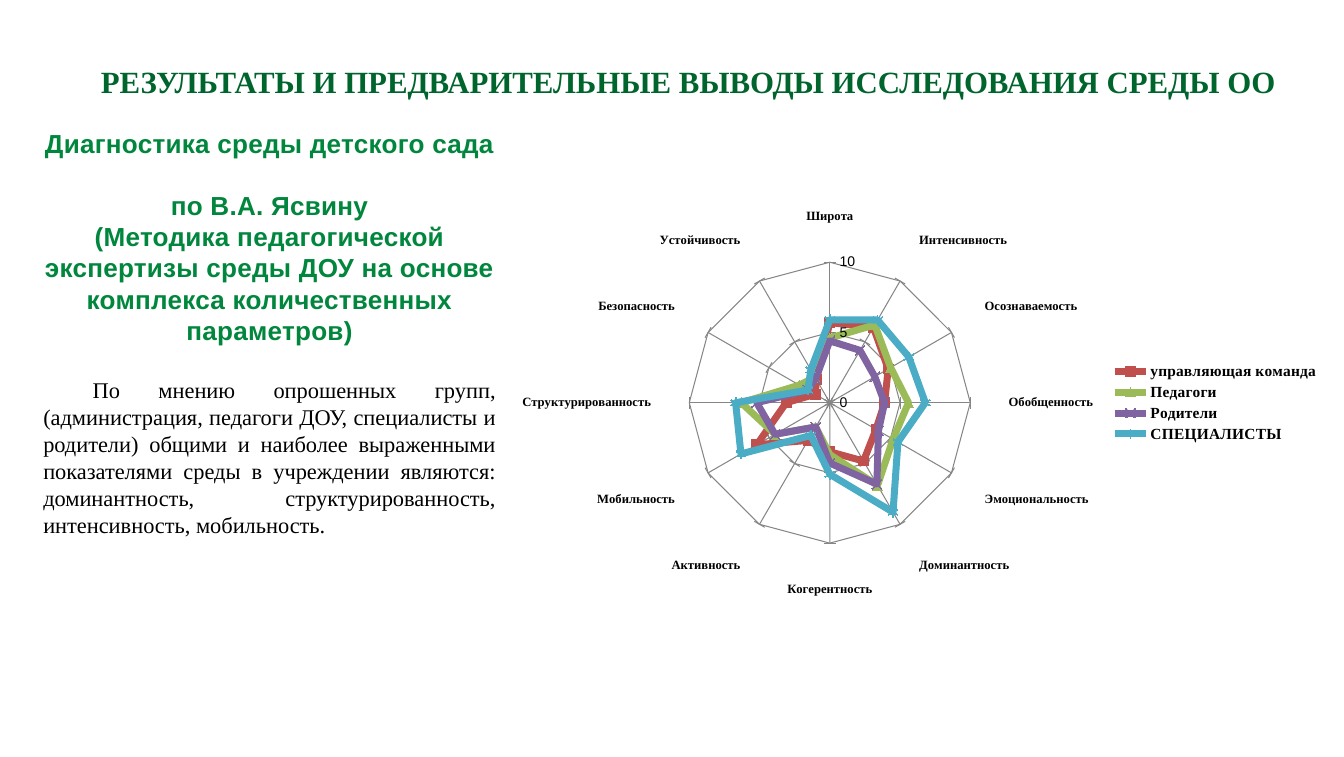
import pptx
import pptx.chart.data
import pptx.dml.color
import pptx.enum.chart
import pptx.enum.text
import pptx.util
from dataclasses import dataclass

Inches, Pt = pptx.util.Inches, pptx.util.Pt
ALIGN = pptx.enum.text.PP_ALIGN


@dataclass(frozen=True)
class Theme:
    sans: str = "Arial"
    serif: str = "Times New Roman"
    title: str = "00642D"
    heading: str = "00863D"
    text: str = "000000"
    grid: str = "868686"
    series: tuple = ("C0504D", "9BBB59", "8064A2", "4BACC6")
    title_size: float = 22
    heading_size: float = 18.6
    body_size: float = 16
    legend_size: float = 11
    scale_size: float = 10
    category_size: float = 9


THEME = Theme()

TITLE = "РЕЗУЛЬТАТЫ И ПРЕДВАРИТЕЛЬНЫЕ ВЫВОДЫ ИССЛЕДОВАНИЯ СРЕДЫ ОО"
HEADINGS = (
    "Диагностика среды детского сада",
    "по В.А. Ясвину",
    "(Методика педагогической экспертизы среды ДОУ на основе "
    "комплекса количественных параметров)",
)
FINDINGS = (
    "По мнению опрошенных групп, (администрация, педагоги ДОУ, специалисты "
    "и родители) общими и наиболее выраженными показателями среды в учреждении "
    "являются: доминантность, структурированность, интенсивность, мобильность."
)
CATEGORIES = (
    "Широта", "Интенсивность", "Осознаваемость", "Обобщенность",
    "Эмоциональность", "Доминантность", "Когерентность", "Активность",
    "Мобильность", "Структурированность", "Безопасность", "Устойчивость",
)
RATINGS = {
    "управляющая команда": (5.7, 6.2, 4.8, 3.9, 3.8, 4.8, 3.5, 3.1, 6, 3.1, 1.2, 1.9),
    "Педагоги": (4.6, 6.4, 5, 5.6, 5.2, 6.8, 3.7, 2, 4.5, 6.3, 2.5, 2.1),
    "Родители": (4.4, 4.3, 3.7, 3.9, 4, 6.7, 4.3, 2, 4.5, 5.2, 1.8, 2),
    "СПЕЦИАЛИСТЫ": (5.9, 6.8, 6.5, 6.8, 5.6, 9, 5.1, 2.7, 7.3, 6.7, 1.8, 2.7),
}


def rgb(value):
    return pptx.dml.color.RGBColor.from_string(value)


def set_font(font, name, size, color, bold=False):
    font.name, font.size, font.bold = name, Pt(size), bold
    font.color.rgb = rgb(color)


def add_text_frame(slide, box):
    tf = slide.shapes.add_textbox(*map(Inches, box)).text_frame
    tf.word_wrap = True
    return tf


def add_title(slide, box):
    tf = add_text_frame(slide, box)
    tf.margin_left = tf.margin_right = tf.margin_top = tf.margin_bottom = 0
    p = tf.paragraphs[0]
    p.text, p.alignment, p.line_spacing = TITLE, ALIGN.CENTER, 0.9
    set_font(p.font, THEME.serif, THEME.title_size, THEME.title, True)


def add_summary(slide, box):
    tf = add_text_frame(slide, box)
    # Method name
    for i, heading in enumerate(HEADINGS):
        p = tf.paragraphs[0] if i == 0 else tf.add_paragraph()
        p.alignment = ALIGN.CENTER
        r = p.add_run()
        r.text = heading
        r.font._element.set("spc", "20")
        set_font(p.font, THEME.sans, THEME.heading_size, THEME.heading, True)
    tf.paragraphs[1].space_before = Pt(22)
    # Findings, with an indented first line
    p = tf.add_paragraph()
    p.text, p.alignment, p.space_before = FINDINGS, ALIGN.JUSTIFY, Pt(22)
    p._p.get_or_add_pPr().set("indent", str(Inches(0.49)))
    set_font(p.font, THEME.serif, THEME.body_size, THEME.text)


def add_radar(slide, box):
    data = pptx.chart.data.CategoryChartData()
    data.categories = CATEGORIES
    for name, values in RATINGS.items():
        data.add_series(name, values)
    chart = slide.shapes.add_chart(
        pptx.enum.chart.XL_CHART_TYPE.RADAR_MARKERS, *map(Inches, box), data
    ).chart
    chart.has_title = False
    set_font(chart.font, THEME.sans, THEME.scale_size, THEME.text)

    # Legend
    chart.has_legend = True
    chart.legend.position = pptx.enum.chart.XL_LEGEND_POSITION.RIGHT
    chart.legend.include_in_layout = False
    set_font(chart.legend.font, THEME.serif, THEME.legend_size, THEME.text, True)

    # Axes
    tick = pptx.enum.chart.XL_TICK_MARK
    category, value = chart.category_axis, chart.value_axis
    set_font(category.tick_labels.font, THEME.serif, THEME.category_size,
             THEME.text, True)
    category.major_tick_mark, value.major_tick_mark = tick.OUTSIDE, tick.CROSS
    value.minimum_scale, value.maximum_scale, value.major_unit = 0, 10, 5
    for axis in (category, value):
        axis.has_major_gridlines = True
        for line in (axis.format.line, axis.major_gridlines.format.line):
            line.color.rgb = rgb(THEME.grid)
            line.width = Pt(0.75)

    # Series
    marker_style = pptx.enum.chart.XL_MARKER_STYLE
    styles = (marker_style.SQUARE, marker_style.TRIANGLE,
              marker_style.X, marker_style.STAR)
    for series, color, style in zip(chart.plots[0].series, THEME.series, styles):
        series.smooth = False
        series.format.line.color.rgb = rgb(color)
        series.format.line.width = Pt(5)
        series.marker.style, series.marker.size = style, 7
        series.marker.format.fill.solid()
        series.marker.format.fill.fore_color.rgb = rgb(color)
        series.marker.format.line.color.rgb = rgb(color)


def main():
    prs = pptx.Presentation()
    prs.slide_width, prs.slide_height = Inches(13.31), Inches(7.5)
    slide = prs.slides.add_slide(prs.slide_layouts[6])
    add_title(slide, (0.16, 0.66, 13.31, 0.33))
    add_summary(slide, (0.33, 1.21, 4.68, 5.12))
    add_radar(slide, (5.01, 1.02, 8.16, 5.94))
    prs.save("out.pptx")


if __name__ == "__main__":
    main()
